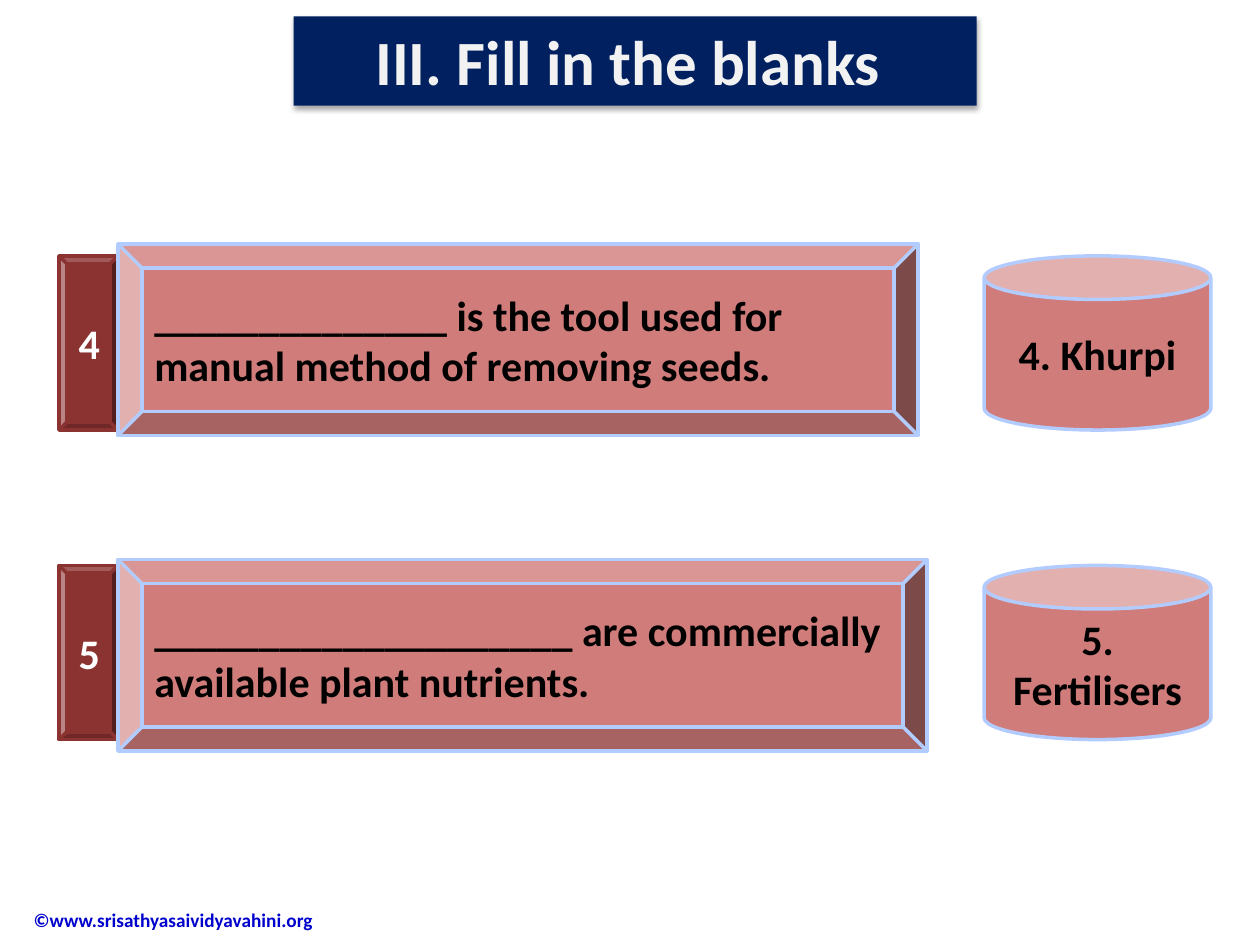
from lxml import etree
from pptx import Presentation
from pptx.dml.color import RGBColor
from pptx.enum.shapes import MSO_SHAPE
from pptx.enum.text import MSO_ANCHOR, PP_ALIGN
from pptx.oxml.ns import qn
from pptx.util import Cm, Pt

BEVEL, CAN, OCTAGON = MSO_SHAPE.BEVEL, MSO_SHAPE.CAN, MSO_SHAPE.OCTAGON
TOP, MIDDLE = MSO_ANCHOR.TOP, MSO_ANCHOR.MIDDLE
LEFT, CENTER = PP_ALIGN.LEFT, PP_ALIGN.CENTER

# Content
TITLE = "III. Fill in the blanks "
FOOTER = "©www.srisathyasaividyavahini.org"
QUESTIONS = [
    {"number": "4", "answer": "Khurpi", "top": 5.16, "panel_top": 4.92, "panel_width": 16.13,
     "sentence": "______________ is the tool used for manual method of removing seeds."},
    {"number": "5", "answer": "Fertilisers", "top": 11.4, "panel_top": 11.28, "panel_width": 16.31,
     "sentence": "____________________ are commercially available plant nutrients."},
]

THEME = {
    "font": "Calibri",
    "title_size": 36, "body_size": 24, "footer_size": 11,
    "navy": "002060", "title_text": "F2F2F2", "footer_text": "0000CC",
    "tag": "8B3331", "tag_text": "FFFFFF",
    "panel": "D07C7A", "panel_line": "B3CCFF", "panel_text": "000000",
}

# Layout in centimetres
TAG_LEFT, TAG_WIDTH = 1.19, 1.19
PANEL_LEFT, PANEL_HEIGHT = TAG_LEFT + TAG_WIDTH, 3.86
CAN_LEFT, CAN_WIDTH = 19.84, 4.57
ROW_HEIGHT = 3.51


def color(name):
    return RGBColor.from_string(THEME[name])


def write(shape, text, size, text_color, align=CENTER, anchor=MIDDLE):
    frame = shape.text_frame
    frame.word_wrap = True
    frame.vertical_anchor = anchor
    paragraph = frame.paragraphs[0]
    paragraph.alignment = align
    run = paragraph.add_run()
    run.text = text
    run.font.name = THEME["font"]
    run.font.size = Pt(THEME[size])
    run.font.bold = True
    run.font.color.rgb = color(text_color)


def add_block(slide, kind, box, fill, line=None):
    shape = slide.shapes.add_shape(kind, *(Cm(value) for value in box))
    shape.shadow.inherit = False
    shape.fill.solid()
    shape.fill.fore_color.rgb = color(fill)
    if line:
        shape.line.color.rgb = color(line)
        shape.line.width = Pt(2)
    else:
        shape.line.fill.background()
    return shape


def add_soft_shadow(shape):
    effects = shape.element.spPr.find(qn("a:effectLst"))
    shadow = etree.SubElement(
        effects, qn("a:outerShdw"), blurRad=str(Pt(3.1)), dist=str(Pt(1.8)),
        dir="5400000", rotWithShape="0")
    black = etree.SubElement(shadow, qn("a:srgbClr"), val="000000")
    etree.SubElement(black, qn("a:alpha"), val="35000")


def add_question(slide, question):
    top = question["top"]
    tag = add_block(slide, BEVEL, (TAG_LEFT, top, TAG_WIDTH, ROW_HEIGHT), "tag", "tag")
    write(tag, question["number"], "body_size", "tag_text")

    panel_box = (PANEL_LEFT, question["panel_top"], question["panel_width"], PANEL_HEIGHT)
    panel = add_block(slide, BEVEL, panel_box, "panel", "panel_line")
    write(panel, question["sentence"], "body_size", "panel_text", LEFT)

    can = add_block(slide, CAN, (CAN_LEFT, top, CAN_WIDTH, ROW_HEIGHT), "panel", "panel_line")
    write(can, f"{question['number']}. {question['answer']}", "body_size", "panel_text")


def main():
    presentation = Presentation()
    presentation.slide_width, presentation.slide_height = Cm(25.4), Cm(19.05)
    slide = presentation.slides.add_slide(presentation.slide_layouts[6])

    # Footer
    footer = slide.shapes.add_textbox(Cm(-0.84), Cm(18.03), Cm(7.67), Cm(1.04))
    footer.text_frame.margin_left = Cm(1.52)
    write(footer, FOOTER, "footer_size", "footer_text", LEFT)

    # Questions with their answers
    for question in QUESTIONS:
        add_question(slide, question)

    # Title banner
    banner = add_block(slide, OCTAGON, (5.92, 0.33, 13.77, 1.8), "navy")
    banner.adjustments[0] = 0
    add_soft_shadow(banner)
    write(banner, TITLE, "title_size", "title_text", anchor=TOP)

    presentation.save("out.pptx")


if __name__ == "__main__":
    main()
